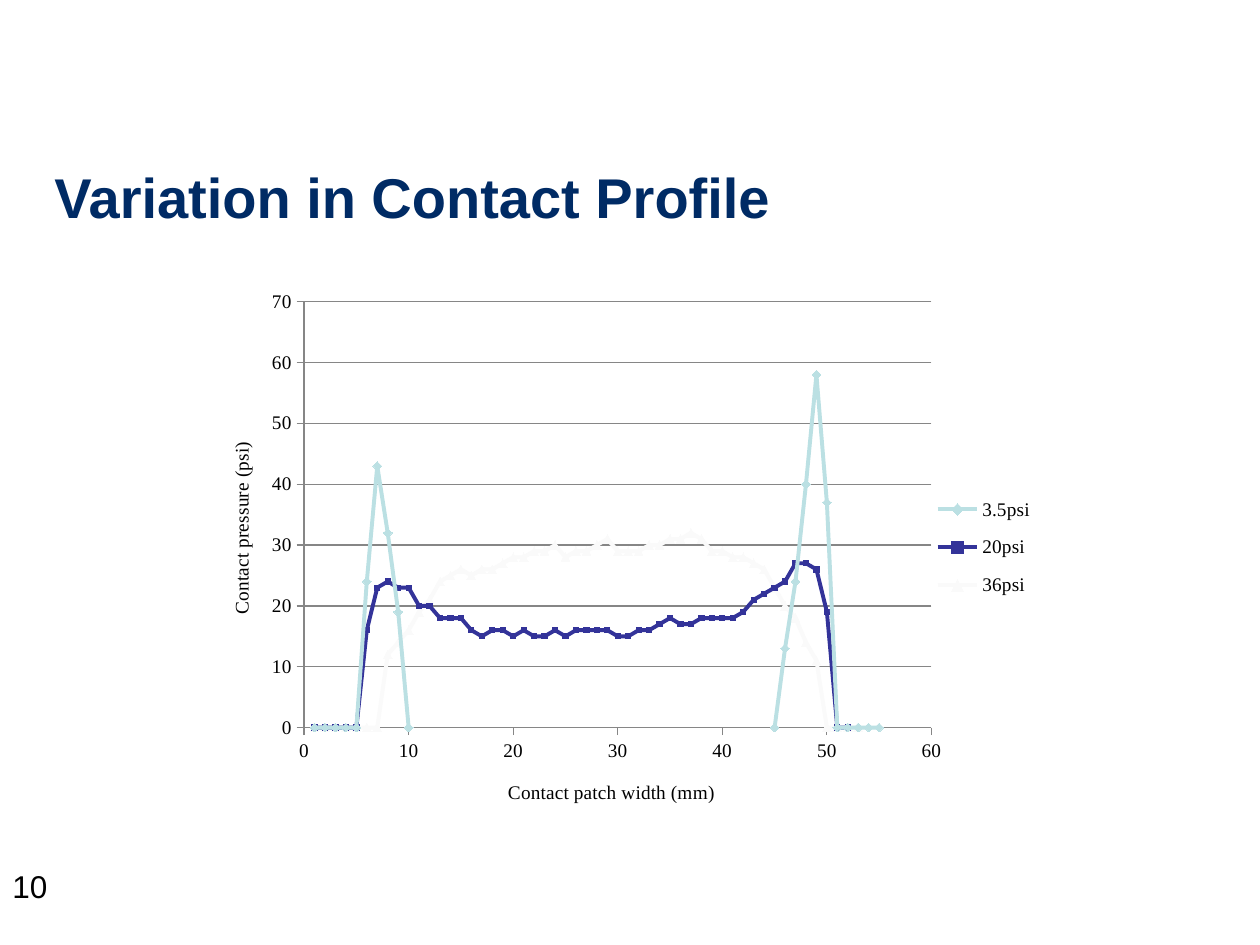
from dataclasses import dataclass

from lxml import etree
from pptx import Presentation
from pptx.chart.data import XyChartData
from pptx.dml.color import RGBColor
from pptx.enum.chart import XL_CHART_TYPE as ChartType
from pptx.enum.chart import XL_LEGEND_POSITION as LegendPosition
from pptx.enum.chart import XL_MARKER_STYLE as Marker
from pptx.enum.chart import XL_TICK_MARK as TickMark
from pptx.oxml.ns import qn
from pptx.util import Pt


@dataclass(frozen=True)
class Theme:
    heading: str = "002B65"
    ink: str = "000000"
    rule: str = "868686"
    sans: str = "Arial"
    serif: str = "Times New Roman"
    title_size: int = 32
    number_size: int = 18
    chart_size: int = 11
    curve_width: float = 2.25


# Contact pressure at each whole millimetre; None leaves a gap
WIDTHS = range(1, 57)
PROFILES = [
    ("3.5psi", "BBE0E3", Marker.DIAMOND, 5,
     [0] * 5 + [24, 43, 32, 19, 0] + [None] * 34
     + [0, 13, 24, 40, 58, 37] + [0] * 5 + [None]),
    ("20psi", "333399", Marker.SQUARE, 3,
     [0] * 5 + [16, 23, 24, 23, 23, 20, 20, 18, 18, 18, 16, 15, 16, 16, 15,
                16, 15, 15, 16, 15, 16, 16, 16, 16, 15, 15, 16, 16, 17, 18,
                17, 17, 18, 18, 18, 18, 19, 21, 22, 23, 24, 27, 27, 26, 19,
                0, 0] + [None] * 4),
    ("36psi", "FAFAFA", Marker.TRIANGLE, 5,
     [0] * 7 + [12, 14, 16, 19, 21, 24, 25, 26, 25, 26, 26, 27, 28, 28, 29,
                29, 30, 28, 29, 29, 30, 31, 29, 29, 29, 30, 30, 31, 31, 32,
                31, 29, 29, 28, 28, 27, 26, 23, 20, 18, 14, 11] + [0] * 4
     + [None] * 3),
]


class SlideBuilder:
    def __init__(self, slide, theme):
        self.slide = slide
        self.theme = theme

    def style_font(self, font, name, size, color, bold=False):
        font.name = name
        font.size = Pt(size)
        font.bold = bold
        font.color.rgb = RGBColor.from_string(color)

    def text(self, wording, box, size, color, bold=False, spacing=None):
        frame = self.slide.shapes.add_textbox(*map(Pt, box)).text_frame
        frame.word_wrap = True
        frame.text = wording
        paragraph = frame.paragraphs[0]
        paragraph.line_spacing = spacing
        self.style_font(paragraph.runs[0].font, self.theme.sans, size, color, bold)

    def place(self, part, left, top, width=None, height=None, inner=False):
        """Set a chart part's place as fractions of the chart area."""
        layout = part.find(qn("c:layout"))
        if layout is None:
            layout = etree.Element(qn("c:layout"))
            leads = (qn("c:tx"), qn("c:legendPos"))
            part.insert(sum(child.tag in leads for child in part), layout)
        manual = etree.SubElement(layout, qn("c:manualLayout"))
        settings = [("layoutTarget", "inner" if inner else None),
                    ("xMode", "edge"), ("yMode", "edge"),
                    ("x", left), ("y", top), ("w", width), ("h", height)]
        for tag, value in settings:
            if value is not None:
                etree.SubElement(manual, qn(f"c:{tag}")).set("val", str(value))

    def axis(self, axis, caption, maximum, title_at):
        theme = self.theme
        axis.minimum_scale, axis.maximum_scale, axis.major_unit = 0, maximum, 10
        axis.major_tick_mark = TickMark.OUTSIDE
        axis.minor_tick_mark = TickMark.NONE
        axis.format.line.color.rgb = RGBColor.from_string(theme.rule)
        self.style_font(axis.tick_labels.font, theme.serif, theme.chart_size, theme.ink)
        title = axis.axis_title
        title.text_frame.text = caption
        self.style_font(title.text_frame.paragraphs[0].runs[0].font,
                        theme.serif, theme.chart_size, theme.ink)
        self.place(title._element, *title_at)

    def curve(self, series, color, marker, marker_size):
        rgb = RGBColor.from_string(color)
        series.smooth = True
        series.format.line.color.rgb = rgb
        series.format.line.width = Pt(self.theme.curve_width)
        series.marker.style = marker
        series.marker.size = marker_size
        series.marker.format.fill.solid()
        series.marker.format.fill.fore_color.rgb = rgb
        series.marker.format.line.color.rgb = rgb
        # Missing readings become true gaps
        for point in list(series._element.iter(qn("c:pt"))):
            if point.findtext(qn("c:v")) == "None":
                point.getparent().remove(point)

    def profile_chart(self, box):
        theme = self.theme
        data = XyChartData()
        for name, _, _, _, pressures in PROFILES:
            readings = data.add_series(name)
            for width, pressure in zip(WIDTHS, pressures):
                readings.add_data_point(width, pressure)
        chart = self.slide.shapes.add_chart(
            ChartType.XY_SCATTER_SMOOTH, *map(Pt, box), data).chart
        self.style_font(chart.font, theme.serif, theme.chart_size, theme.ink)
        chart.has_title = False
        plot = chart.plots[0]
        plot.vary_by_categories = False
        for series, (_, color, marker, size, _) in zip(plot.series, PROFILES):
            self.curve(series, color, marker, size)

        # Axes and gridlines
        self.axis(chart.category_axis, "Contact patch width (mm)", 60, (0.35, 0.91))
        self.axis(chart.value_axis, "Contact pressure (psi)", 70, (0.03, 0.29))
        chart.category_axis.has_major_gridlines = False
        chart.value_axis.has_major_gridlines = True
        gridline = chart.value_axis.major_gridlines.format.line
        gridline.color.rgb = RGBColor.from_string(theme.rule)

        # Legend and plot area
        chart.has_legend = True
        chart.legend.position = LegendPosition.RIGHT
        chart.legend.include_in_layout = False
        self.style_font(chart.legend.font, theme.serif, theme.chart_size, theme.ink)
        self.place(chart.legend._element, 0.84, 0.37, 0.12, 0.24)
        plot_area = chart._chartSpace.find(".//" + qn("c:plotArea"))
        self.place(plot_area, 0.12, 0.04, 0.72, 0.78, inner=True)


def main():
    deck = Presentation()
    deck.slide_width, deck.slide_height = Pt(720), Pt(540)
    theme = Theme()
    builder = SlideBuilder(deck.slides.add_slide(deck.slide_layouts[6]), theme)

    # Heading
    builder.text("Variation in Contact Profile", (24, 93.6, 648, 60),
                 theme.title_size, theme.heading, bold=True, spacing=0.9)
    # Contact pressure chart
    builder.profile_chart((114, 160, 498, 312))
    # Slide number
    builder.text("10", (0, 492, 228, 36), theme.number_size, theme.ink)

    deck.save("out.pptx")


if __name__ == "__main__":
    main()
